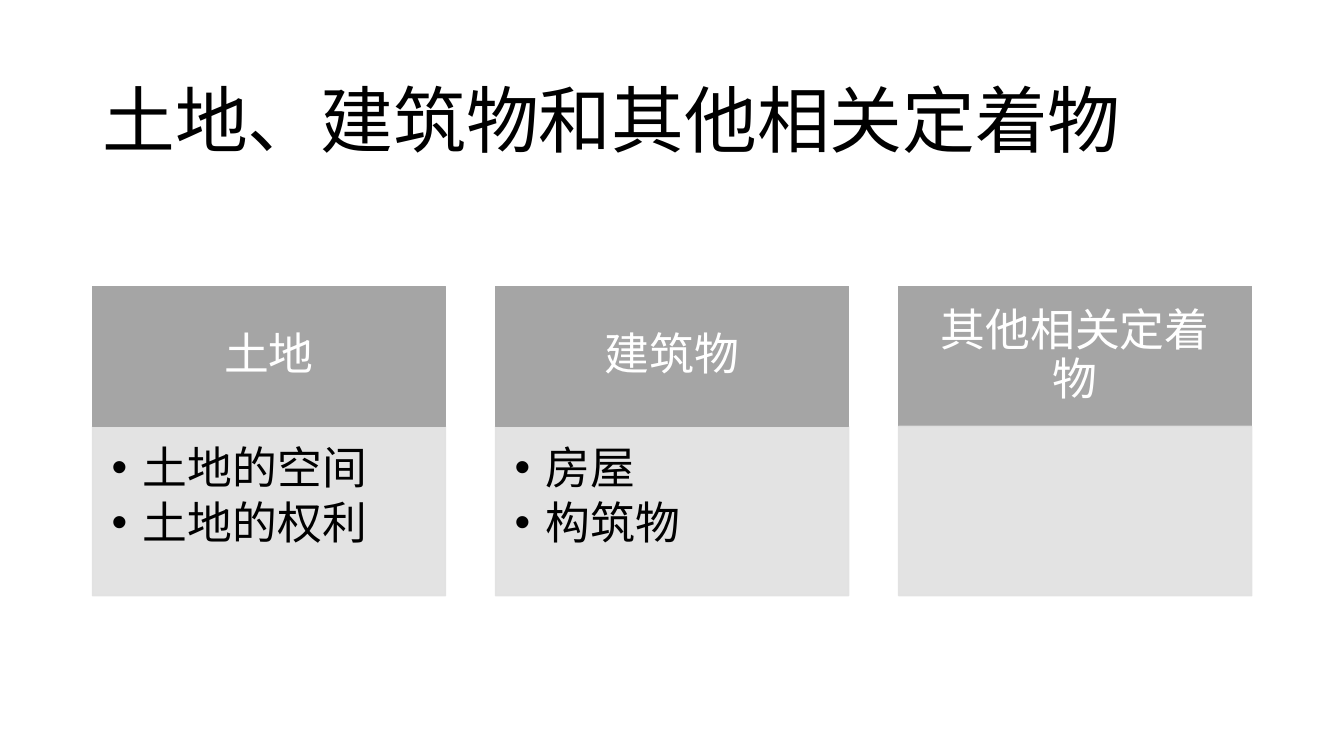
from dataclasses import dataclass

from lxml.etree import SubElement
from pptx import Presentation
from pptx.dml.color import RGBColor
from pptx.enum.shapes import MSO_SHAPE
from pptx.enum.text import MSO_ANCHOR, MSO_AUTO_SIZE, PP_ALIGN
from pptx.oxml.ns import qn
from pptx.util import Inches, Pt


@dataclass(frozen=True)
class Theme:
    font: str = "Noto Sans CJK SC"
    ink: str = "000000"
    header_ink: str = "FFFFFF"
    header_fill: str = "A5A5A5"
    panel_fill: str = "E1E1E1"
    title_size: int = 52
    card_size: int = 32
    line_spacing: float = 0.9


@dataclass(frozen=True)
class Box:
    column: float
    row: float
    columns: float
    rows: float


@dataclass(frozen=True)
class Card:
    heading: str
    items: tuple = ()


THEME = Theme()
SLIDE_WIDTH, SLIDE_HEIGHT = Inches(13.33), Inches(7.5)
GRID = 100
LEFT, CONTENT_COLUMNS, CARD_COLUMNS = 6.88, 86.25, 26.27
HEADER_ROW, HEADER_ROWS, PANEL_ROWS = 37.87, 18.53, 22.4
TITLE = "土地、建筑物和其他相关定着物"
CARDS = (
    Card("土地", ("土地的空间", "土地的权利")),
    Card("建筑物", ("房屋", "构筑物")),
    Card("其他相关定着物"),
)


def place(shape, box: Box) -> None:
    shape.left = round(SLIDE_WIDTH * box.column / GRID)
    shape.top = round(SLIDE_HEIGHT * box.row / GRID)
    shape.width = round(SLIDE_WIDTH * box.columns / GRID)
    shape.height = round(SLIDE_HEIGHT * box.rows / GRID)


def paint(shape, color: str, opacity: int = 100) -> None:
    shape.fill.solid()
    shape.line.fill.solid()
    shape.line.width = Pt(1)
    for fill in (shape.fill, shape.line.fill):
        fill.fore_color.rgb = RGBColor.from_string(color)
    if opacity < 100:
        for color_element in shape.element.spPr.iter(qn("a:srgbClr")):
            SubElement(color_element, qn("a:alpha"), val=str(opacity * 1000))


def add_rectangle(slide, box: Box):
    shape = slide.shapes.add_shape(MSO_SHAPE.RECTANGLE, 0, 0, 0, 0)
    shape.shadow.inherit = False
    place(shape, box)
    return shape


def write(shape, lines: tuple, *, size: int, color: str, align=PP_ALIGN.LEFT,
          anchor=MSO_ANCHOR.MIDDLE, insets: tuple = (0.1, 0.05, 0.1, 0.05),
          space_after: float = 0, bullet_indent: float = 0) -> None:
    frame = shape.text_frame
    frame.text = "\n".join(lines)
    frame.word_wrap = True
    frame.auto_size = MSO_AUTO_SIZE.NONE
    frame.vertical_anchor = anchor
    (frame.margin_left, frame.margin_top,
     frame.margin_right, frame.margin_bottom) = map(Inches, insets)
    for paragraph in frame.paragraphs:
        paragraph.alignment = align
        paragraph.line_spacing = THEME.line_spacing
        paragraph.space_before = Pt(0)
        paragraph.space_after = Pt(size * space_after)
        if bullet_indent:
            properties = paragraph._p.get_or_add_pPr()
            properties.set("marL", str(Inches(bullet_indent)))
            properties.set("indent", str(-Inches(bullet_indent)))
            SubElement(properties, qn("a:buChar"), char="•")
        for run in paragraph.runs:
            run.font.size = Pt(size)
            run.font.name = THEME.font
            run.font.color.rgb = RGBColor.from_string(color)
            SubElement(run._r.get_or_add_rPr(), qn("a:ea"), typeface=THEME.font)


def add_card(slide, card: Card, column: float, bodies) -> None:
    header = add_rectangle(slide, Box(column, HEADER_ROW, CARD_COLUMNS, HEADER_ROWS))
    paint(header, THEME.header_fill)
    write(header, (card.heading,), size=THEME.card_size, color=THEME.header_ink,
          align=PP_ALIGN.CENTER, insets=(0.25, 0.14, 0.25, 0.14), space_after=0.35)

    panel_box = Box(column, HEADER_ROW + HEADER_ROWS, CARD_COLUMNS, PANEL_ROWS)
    if card.items:
        panel = next(bodies)
        place(panel, panel_box)
        write(panel, card.items, size=THEME.card_size, color=THEME.ink,
              anchor=MSO_ANCHOR.TOP, insets=(0.19, 0.19, 0.25, 0.28),
              space_after=0.15, bullet_indent=0.31)
    else:
        panel = add_rectangle(slide, panel_box)
    paint(panel, THEME.panel_fill, opacity=90)


def main() -> None:
    presentation = Presentation()
    presentation.slide_width, presentation.slide_height = SLIDE_WIDTH, SLIDE_HEIGHT
    two_content_layout = presentation.slide_layouts[3]
    slide = presentation.slides.add_slide(two_content_layout)
    title, *bodies = slide.placeholders

    place(title, Box(LEFT, 8.13, CONTENT_COLUMNS, 16.56))
    write(title, (TITLE,), size=THEME.title_size, color=THEME.ink)

    pitch = (CONTENT_COLUMNS - CARD_COLUMNS) / (len(CARDS) - 1)
    remaining_bodies = iter(bodies)
    for index, card in enumerate(CARDS):
        add_card(slide, card, LEFT + index * pitch, remaining_bodies)

    presentation.save("out.pptx")


if __name__ == "__main__":
    main()
